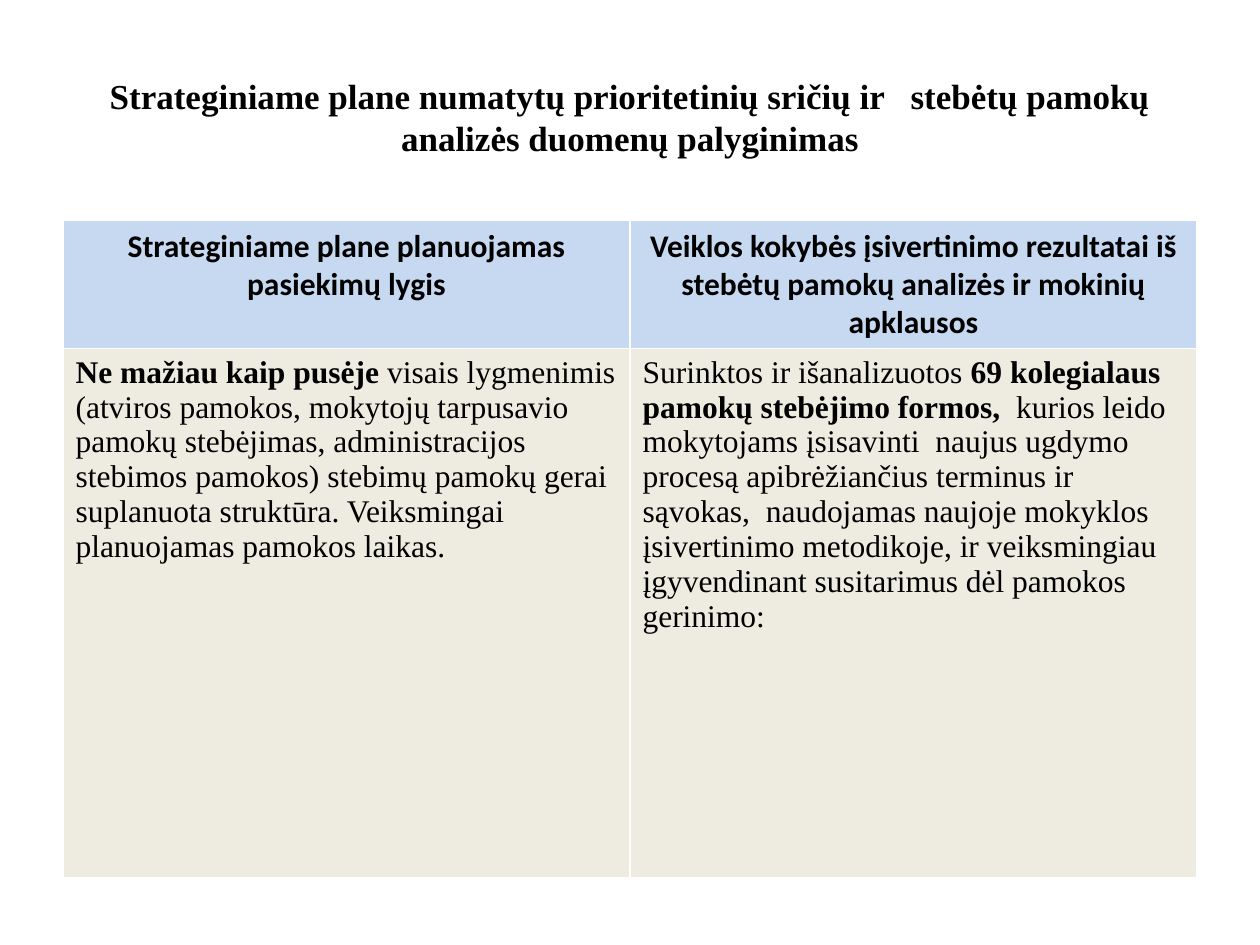
from pptx import Presentation
from pptx.dml.color import RGBColor
from pptx.enum.text import MSO_ANCHOR, PP_ALIGN
from pptx.util import Cm, Pt

SERIF, SANS = "Times New Roman", "Calibri"
TITLE = ("Strateginiame plane numatytų prioritetinių sričių ir   stebėtų pamokų "
         "analizės duomenų palyginimas")
HEADERS = [
    "Strateginiame plane planuojamas pasiekimų lygis",
    "Veiklos kokybės įsivertinimo rezultatai iš stebėtų pamokų analizės ir mokinių apklausos",
]
BODIES = [
    [("Ne mažiau kaip pusėje ", True),
     ("visais lygmenimis (atviros pamokos, mokytojų tarpusavio pamokų stebėjimas, "
      "administracijos stebimos pamokos) stebimų pamokų gerai suplanuota struktūra. "
      "Veiksmingai planuojamas pamokos laikas.", False)],
    [("Surinktos ir išanalizuotos ", False),
     ("69 kolegialaus pamokų stebėjimo formos,", True),
     ("  kurios leido mokytojams įsisavinti  naujus ugdymo procesą apibrėžiančius "
      "terminus ir sąvokas,  naudojamas naujoje mokyklos įsivertinimo metodikoje, "
      "ir veiksmingiau įgyvendinant susitarimus dėl pamokos gerinimo:", False)],
]
ROWS = [
    {"cells": [[(h, True)] for h in HEADERS], "height": 2.54, "fill": "C6D9F1",
     "font": SANS, "align": PP_ALIGN.CENTER},
    {"cells": BODIES, "height": 10.67, "fill": "EEECE1",
     "font": SERIF, "align": PP_ALIGN.LEFT},
]
LEFT, WIDTH = 1.27, 22.86


def color(value):
    return RGBColor.from_string(value)


def write(tf, runs, font=SERIF, size=18, align=PP_ALIGN.LEFT, fill="000000"):
    p = tf.paragraphs[0]
    p.alignment = align
    for text, bold in runs:
        r = p.add_run()
        r.text = text
        r.font.name, r.font.size, r.font.bold = font, Pt(size), bold
        r.font.color.rgb = color(fill)


prs = Presentation()
prs.slide_width, prs.slide_height = Cm(25.4), Cm(19.05)
s = prs.slides.add_slide(prs.slide_layouts[5])

title = s.shapes.title
title.left, title.top, title.width, title.height = Cm(LEFT), Cm(0.76), Cm(WIDTH), Cm(3.18)
title.text_frame.vertical_anchor = MSO_ANCHOR.MIDDLE
write(title.text_frame, [(TITLE, True)], size=20, align=PP_ALIGN.CENTER)

total = sum(row["height"] for row in ROWS)
table = s.shapes.add_table(len(ROWS), len(HEADERS), Cm(LEFT), Cm(4.45),
                           Cm(WIDTH), Cm(total)).table
for i, row in enumerate(ROWS):
    table.rows[i].height = Cm(row["height"])
    for j, runs in enumerate(row["cells"]):
        cell = table.cell(i, j)
        cell.fill.solid()
        cell.fill.fore_color.rgb = color(row["fill"])
        write(cell.text_frame, runs, font=row["font"], align=row["align"])

prs.save("out.pptx")
